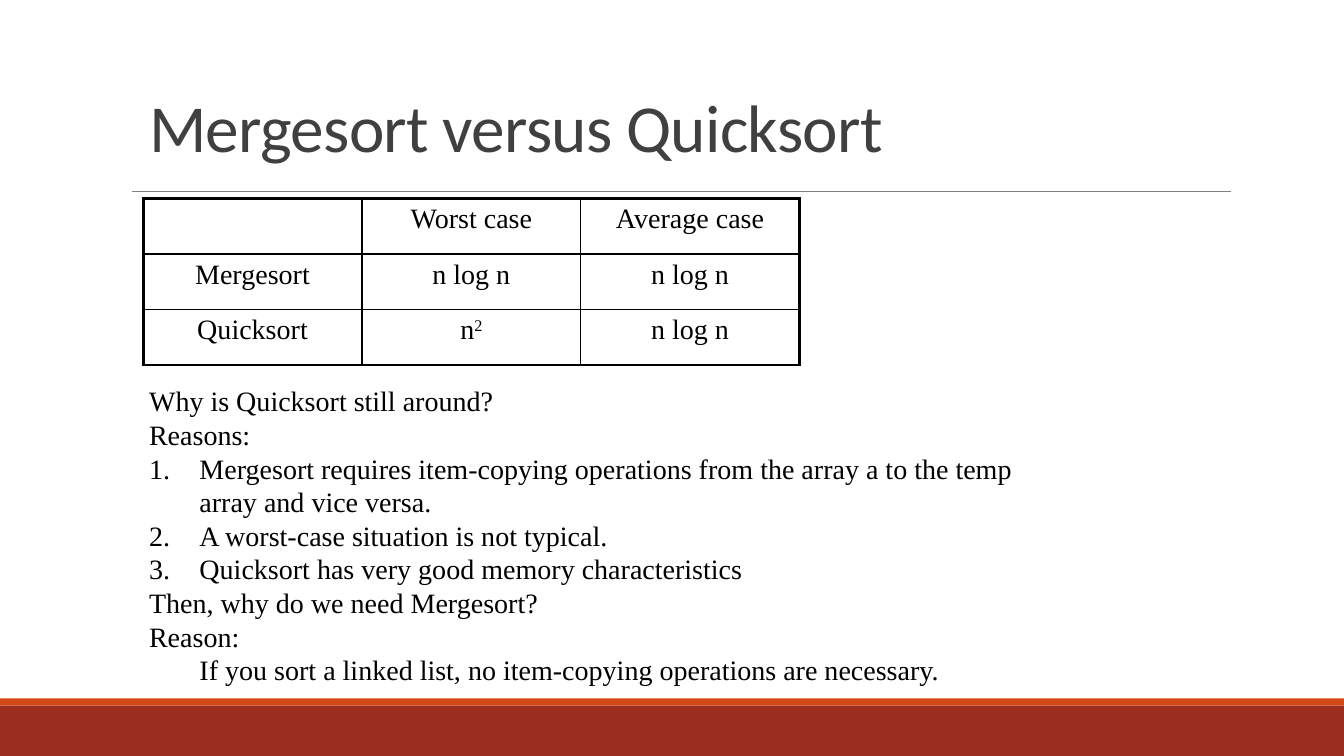
"""Build the slide that compares Mergesort with Quicksort."""
from dataclasses import dataclass

from lxml.etree import SubElement
from pptx import Presentation
from pptx.dml.color import RGBColor
from pptx.enum.shapes import MSO_CONNECTOR, MSO_SHAPE
from pptx.enum.text import MSO_ANCHOR, MSO_AUTO_SIZE, PP_ALIGN
from pptx.oxml import parse_xml
from pptx.oxml.ns import nsdecls, qn
from pptx.slide import Slide
from pptx.table import _Cell
from pptx.text.text import _Paragraph, _Run
from pptx.util import Emu, Pt

PX = 9144


@dataclass(frozen=True)
class Theme:
    title_font: str = "Calibri"
    body_font: str = "Times New Roman"
    title_size: int = 48
    body_size: int = 20
    title_color: str = "404040"
    ink: str = "000000"
    rule: str = "808080"
    footer: str = "9B2D1F"
    accent: str = "D34817"
    rule_width: float = 0.5
    inner_border: float = 1
    outer_border: float = 2.25


@dataclass(frozen=True)
class Band:
    top: int
    height: int
    color: str


@dataclass(frozen=True)
class Line:
    text: str
    number: int = 0
    indented: bool = False


THEME = Theme()
SLIDE_WIDTH, SLIDE_HEIGHT = 1333, 750
COLUMN_WIDTH, ROW_HEIGHT = 217, 55
HANGING = 50
BANDS = [Band(700, 50, THEME.footer), Band(693, 7, THEME.accent)]
COMPLEXITY = [
    ["", "Worst case", "Average case"],
    ["Mergesort", "n log n", "n log n"],
    ["Quicksort", "n^2", "n log n"],
]
DISCUSSION = [
    Line("Why is Quicksort still around?"),
    Line("Reasons:"),
    Line("Mergesort requires item-copying operations from the array a to the temp", number=1),
    Line("array and vice versa.", indented=True),
    Line("A worst-case situation is not typical.", number=2),
    Line("Quicksort has very good memory characteristics", number=3),
    Line("Then, why do we need Mergesort?"),
    Line("Reason:"),
    Line("If you sort a linked list, no item-copying operations are necessary.", indented=True),
]


def px(length: int) -> Emu:
    return Emu(length * PX)


def box(left: int, top: int, width: int, height: int) -> tuple[Emu, Emu, Emu, Emu]:
    return px(left), px(top), px(width), px(height)


def style_run(run: _Run, font: str, size: int, color: str) -> None:
    run.font.name = font
    run.font.size = Pt(size)
    run.font.color.rgb = RGBColor.from_string(color)


def style_body(paragraph: _Paragraph) -> None:
    for run in paragraph.runs:
        style_run(run, THEME.body_font, THEME.body_size, THEME.ink)


def draw_band(slide: Slide, band: Band) -> None:
    bar = slide.shapes.add_shape(
        MSO_SHAPE.RECTANGLE, *box(0, band.top, SLIDE_WIDTH, band.height)
    )
    bar.shadow.inherit = False
    bar.fill.solid()
    bar.fill.fore_color.rgb = RGBColor.from_string(band.color)
    bar.line.fill.background()


def draw_title_rule(slide: Slide) -> None:
    rule = slide.shapes.add_connector(
        MSO_CONNECTOR.STRAIGHT, px(131), px(190), px(1221), px(190)
    )
    rule.line.color.rgb = RGBColor.from_string(THEME.rule)
    rule.line.width = Pt(THEME.rule_width)
    SubElement(rule._element.spPr, qn("a:effectLst"))


def write_title(slide: Slide, wording: str) -> None:
    title = slide.shapes.title
    title.left, title.top, title.width, title.height = box(138, 0, 1028, 170)
    frame = title.text_frame
    frame.text = wording
    frame.auto_size = MSO_AUTO_SIZE.NONE
    frame.vertical_anchor = MSO_ANCHOR.BOTTOM
    heading = frame.paragraphs[0]
    heading.alignment = PP_ALIGN.LEFT
    heading.line_spacing = 0.85
    run = heading.runs[0]
    style_run(run, THEME.title_font, THEME.title_size, THEME.title_color)
    run.font._element.set("spc", "-50")


def draw_borders(cell: _Cell, row: int, column: int) -> None:
    last_row, last_column = len(COMPLEXITY) - 1, len(COMPLEXITY[0]) - 1
    outer_sides = {
        "L": column == 0,
        "R": column == last_column,
        "T": row == 0,
        "B": row == last_row,
    }
    properties = cell._tc.get_or_add_tcPr()
    for position, (side, outer) in enumerate(outer_sides.items()):
        width = Pt(THEME.outer_border if outer else THEME.inner_border)
        border = parse_xml(
            f'<a:ln{side} {nsdecls("a")} w="{width}"><a:solidFill>'
            f'<a:srgbClr val="{THEME.ink}"/></a:solidFill></a:ln{side}>'
        )
        properties.insert(position, border)


def write_cell(cell: _Cell, wording: str) -> None:
    base, _, exponent = wording.partition("^")
    entry = cell.text_frame.paragraphs[0]
    entry.text = base
    entry.alignment = PP_ALIGN.CENTER
    if exponent:
        power = entry.add_run()
        power.text = exponent
        power.font._element.set("baseline", "30000")
    style_body(entry)


def draw_complexity(slide: Slide) -> None:
    rows, columns = len(COMPLEXITY), len(COMPLEXITY[0])
    table = slide.shapes.add_table(
        rows, columns, *box(142, 197, columns * COLUMN_WIDTH, rows * ROW_HEIGHT)
    ).table
    table.first_row = False
    table.horz_banding = False
    for row, entries in enumerate(COMPLEXITY):
        for column, wording in enumerate(entries):
            cell = table.cell(row, column)
            cell.fill.background()
            write_cell(cell, wording)
            draw_borders(cell, row, column)


def write_line(paragraph: _Paragraph, line: Line) -> None:
    paragraph.text = line.text
    style_body(paragraph)
    properties = paragraph._p.get_or_add_pPr()
    properties.set("marL", str(px(HANGING)))
    properties.set("indent", str(0 if line.indented else -px(HANGING)))
    if line.number:
        numbering = SubElement(properties, qn("a:buAutoNum"), type="arabicPeriod")
        if line.number > 1:
            numbering.set("startAt", "2")
    else:
        SubElement(properties, qn("a:buNone"))


def write_discussion(slide: Slide) -> None:
    frame = slide.shapes.add_textbox(*box(138, 376, 881, 313)).text_frame
    frame.word_wrap = True
    for position, line in enumerate(DISCUSSION):
        paragraph = frame.add_paragraph() if position else frame.paragraphs[0]
        write_line(paragraph, line)


def main() -> None:
    deck = Presentation()
    deck.slide_width, deck.slide_height = px(SLIDE_WIDTH), px(SLIDE_HEIGHT)
    slide = deck.slides.add_slide(deck.slide_layouts[5])
    for band in BANDS:
        draw_band(slide, band)
    draw_title_rule(slide)
    write_title(slide, "Mergesort versus Quicksort")
    draw_complexity(slide)
    write_discussion(slide)
    deck.save("out.pptx")


if __name__ == "__main__":
    main()
